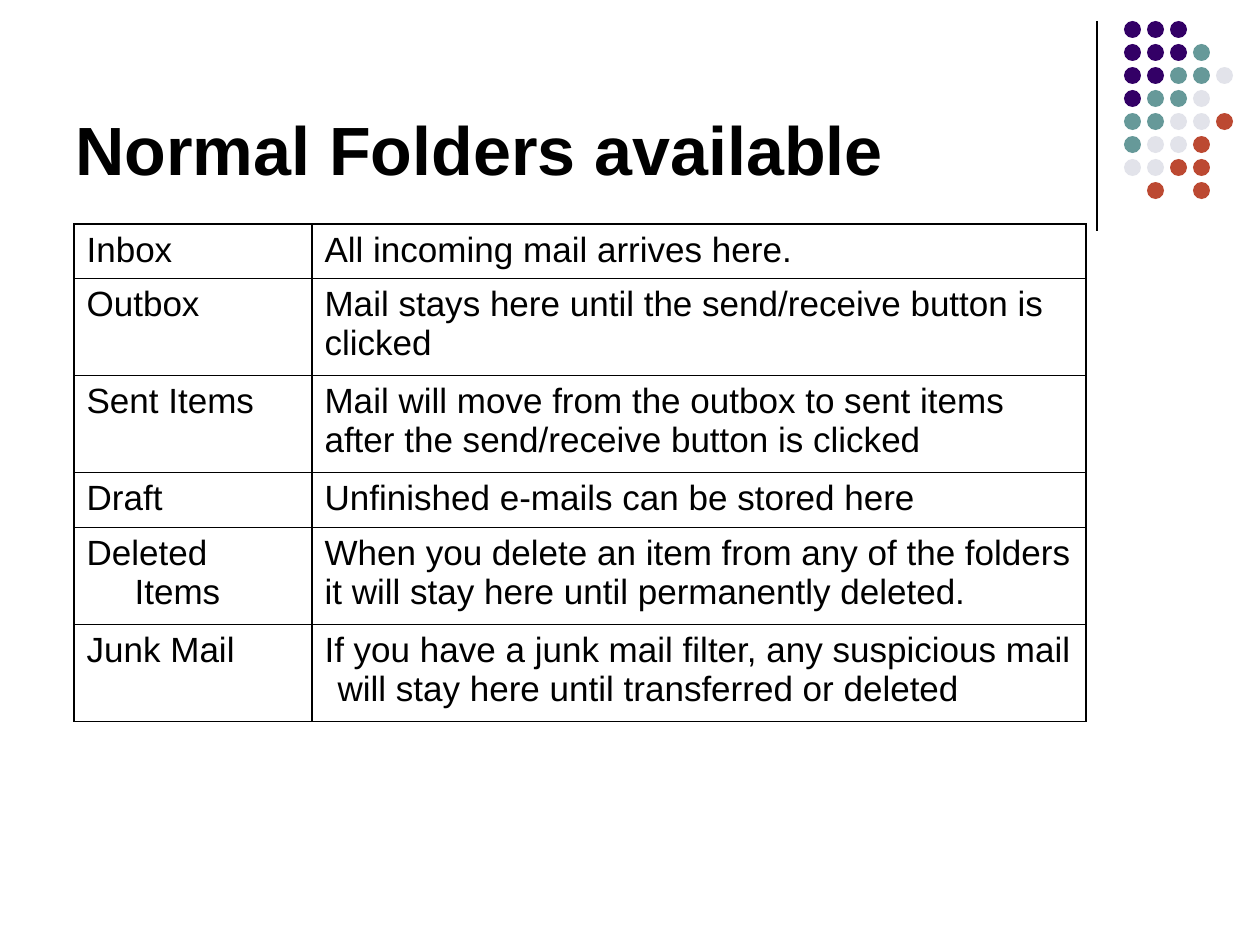
from lxml.etree import SubElement
from pptx import Presentation
from pptx.dml.color import RGBColor
from pptx.enum.shapes import MSO_CONNECTOR as Connector, MSO_SHAPE as Shape
from pptx.enum.text import MSO_ANCHOR as Anchor
from pptx.oxml.ns import qn
from pptx.util import Emu, Pt

BLACK = RGBColor(0x00, 0x00, 0x00)
PURPLE = RGBColor(0x33, 0x00, 0x66)
TEAL = RGBColor(0x66, 0x99, 0x99)
PALE = RGBColor(0xE2, 0xE3, 0xEA)
RUST = RGBColor(0xBC, 0x49, 0x32)

DOT_COLORS = {"P": PURPLE, "T": TEAL, "G": PALE, "R": RUST}
DOT_ROWS = ["PPP", "PPPT", "PPTTG", "PTTG", "TTGGR", "TGGR", "GGRR", " R R"]
DOT_LEFT, DOT_TOP, DOT_STEP, DOT_SIZE = 1124, 21, 23, 17

HANGING = 48
FOLDERS = [
    ("Inbox", "All incoming mail arrives here.", HANGING, 54),
    ("Outbox", "Mail stays here until the send/receive button is clicked", 0, 97),
    ("Sent Items", "Mail will move from the outbox to sent items after the "
     "send/receive button is clicked", 0, 97),
    ("Draft", "Unfinished e-mails can be stored here", HANGING, 54),
    ("Deleted Items", "When you delete an item from any of the folders it will "
     "stay here until permanently deleted.", 0, 97),
    ("Junk Mail", "If you have a junk mail filter, any suspicious mail will "
     "stay here until transferred or deleted", 13, 97),
]


def px(length):
    """Turn pixels into EMU."""
    return Emu(round(length * 914400 / 126))


class Page:
    """Style and current slide, with one method per kind of element."""

    font_name = "Arial"
    color = BLACK

    def __init__(self, slide):
        """Keep the slide that is drawn on."""
        self.shapes = slide.shapes

    def set_text(self, para, text, size, bold=False, hanging=0):
        """Put styled text with a hanging indent into a paragraph."""
        para.text = text
        if hanging:
            properties = para._p.get_or_add_pPr()
            properties.set("marL", str(px(hanging)))
            properties.set("indent", str(-px(hanging)))
        font = para.font
        font.name, font.size, font.bold = self.font_name, Pt(size), bold
        font.color.rgb = self.color

    def title(self, text, left, top, width, height):
        """Add a bold title set at the bottom of its box."""
        box = self.shapes.add_textbox(px(left), px(top), px(width), px(height))
        frame = box.text_frame
        frame.word_wrap = True
        frame.vertical_anchor = Anchor.BOTTOM
        self.set_text(frame.paragraphs[0], text, 39, bold=True)

    def rule(self, x, top, bottom):
        """Add a thin vertical line."""
        line = self.shapes.add_connector(
            Connector.STRAIGHT, px(x), px(top), px(x), px(bottom))
        line.line.color.rgb = self.color
        line.line.width = Pt(0.75)
        SubElement(line._element.spPr, qn("a:effectLst"))

    def dot(self, left, top, size, color):
        """Add a filled circle without outline."""
        dot = self.shapes.add_shape(
            Shape.OVAL, px(left), px(top), px(size), px(size))
        dot.shadow.inherit = False
        dot.fill.solid()
        dot.fill.fore_color.rgb = color
        dot.line.fill.background()

    def border(self, cell):
        """Outline all four sides of a cell."""
        properties = cell._tc.get_or_add_tcPr()
        for side in ("lnL", "lnR", "lnT", "lnB"):
            line = SubElement(properties, qn(f"a:{side}"), w=str(Pt(1)))
            fill = SubElement(line, qn("a:solidFill"))
            SubElement(fill, qn("a:srgbClr"), val=str(self.color))

    def table(self, rows, left, top, widths):
        """Add a plain ruled table of names and descriptions."""
        height = sum(row[-1] for row in rows)
        table = self.shapes.add_table(
            len(rows), len(widths), px(left), px(top),
            px(sum(widths)), px(height)).table
        table.first_row = table.horz_banding = False
        for column, width in zip(table.columns, widths):
            column.width = px(width)
        for row, (name, description, hanging, row_height) in zip(table.rows, rows):
            row.height = px(row_height)
            contents = ((name, HANGING), (description, hanging))
            for cell, (text, indent) in zip(row.cells, contents):
                self.border(cell)
                cell.fill.background()
                self.set_text(cell.text_frame.paragraphs[0], text, 20, hanging=indent)


def main():
    """Build and save the slide."""
    deck = Presentation()
    deck.slide_width, deck.slide_height = px(1260), px(945)
    page = Page(deck.slides.add_slide(deck.slide_layouts[6]))
    page.rule(1097, 21, 231)
    for row, codes in enumerate(DOT_ROWS):
        for column, code in enumerate(codes):
            if code in DOT_COLORS:
                page.dot(DOT_LEFT + column * DOT_STEP, DOT_TOP + row * DOT_STEP,
                         DOT_SIZE, DOT_COLORS[code])
    page.title("Normal Folders available", 63, 16, 1040, 179)
    page.table(FOLDERS, 74, 224, (238, 774))
    deck.save("out.pptx")


if __name__ == "__main__":
    main()
